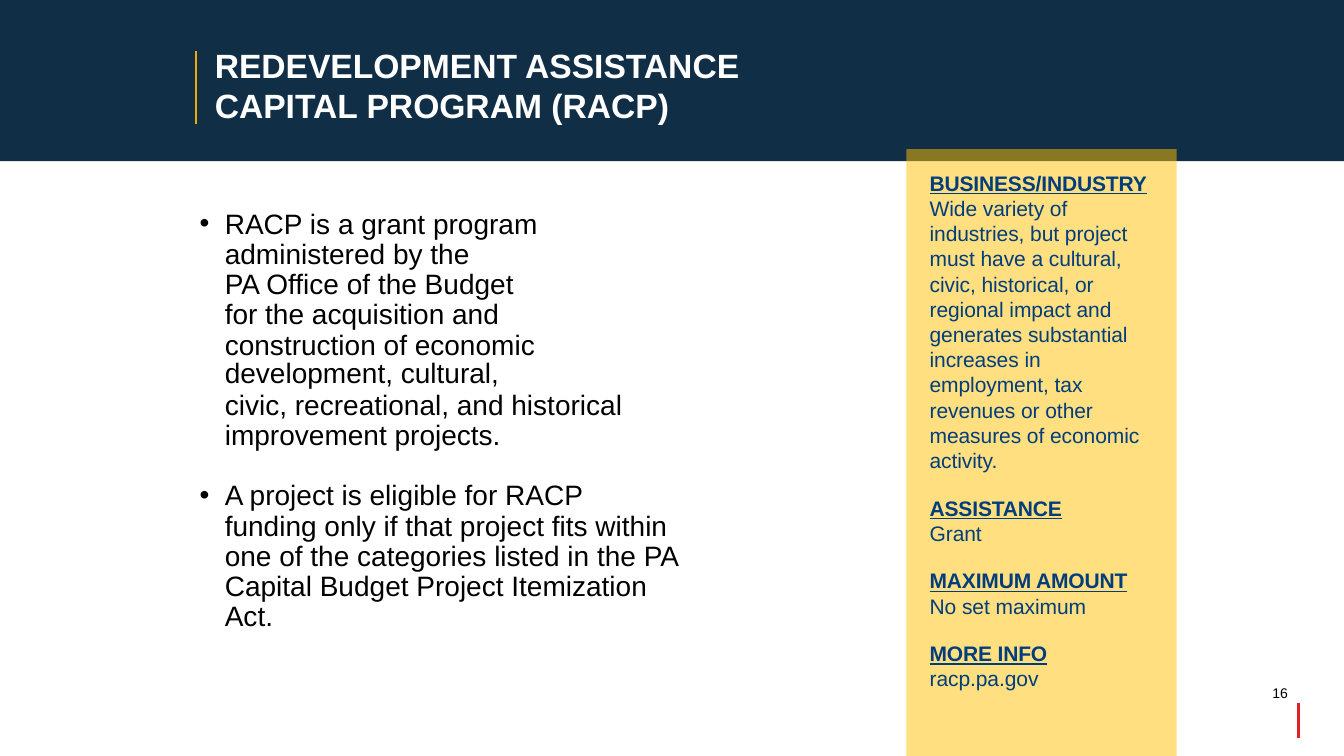
import pptx
import pptx.util
import pptx.dml.color
import pptx.enum.shapes
import pptx.enum.text
import pptx.oxml.ns
import lxml.etree

WIDE, HIGH = 13.33, 7.5
NAVY, GOLD, RED, AMBER = "112E47", "EFAC00", "E22027", "FFC000"
WHITE, BLACK, BLUE = "FFFFFF", "000000", "003D7D"

TITLE = "REDEVELOPMENT ASSISTANCE CAPITAL PROGRAM (RACP)"
PAGE = "16"
GRANT = [
    ("RACP is a grant program\vadministered by the", 21.6, 0),
    ("PA Office of the Budget\vfor the acquisition and\vconstruction of economic", 21.6, 0),
    ("development, cultural,", 20.1, 0),
    ("civic, recreational, and historical\vimprovement projects.", 21.6, 1.5),
]
RULES = [
    ("A project is eligible for RACP\vfunding only if that project fits within\v"
     "one of the categories listed in the PA\vCapital Budget Project Itemization\vAct.", 0.9, 0),
]
FACTS = [
    ("BUSINESS/INDUSTRY",
     "Wide variety of industries, but project must have a cultural, civic, "
     "historical, or regional impact and generates substantial increases in "
     "employment, tax revenues or other measures of economic activity."),
    ("ASSISTANCE", "Grant"),
    ("MAXIMUM AMOUNT", "No set maximum"),
    ("MORE INFO", "racp.pa.gov"),
]

BAND = 1.6
LEFT = 1.97
SIDE = (8.99, 1.48, 2.68, HIGH - 1.48)
INDENT = 0.26

inch, pt = pptx.util.Inches, pptx.util.Pt
qn = pptx.oxml.ns.qn

deck = pptx.Presentation()
deck.slide_width, deck.slide_height = inch(WIDE), inch(HIGH)
slide = deck.slides.add_slide(deck.slide_layouts[6])
shapes = slide.shapes


def color(code):
    return pptx.dml.color.RGBColor.from_string(code)


def block(place, code, alpha=None):
    kind = pptx.enum.shapes.MSO_SHAPE.RECTANGLE
    shape = shapes.add_shape(kind, *map(inch, place))
    shape.shadow.inherit = False
    shape.fill.solid()
    shape.fill.fore_color.rgb = color(code)
    shape.line.fill.background()
    if alpha:
        tone = shape.fill._xPr.find(qn("a:solidFill"))[0]
        lxml.etree.SubElement(tone, qn("a:alpha")).set("val", str(alpha * 1000))
    return shape


def rule(x, top, tall, code, size):
    kind = pptx.enum.shapes.MSO_CONNECTOR.STRAIGHT
    line = shapes.add_connector(kind, inch(x), inch(top), inch(x), inch(top + tall))
    line.line.color.rgb = color(code)
    line.line.width = pt(size)
    lxml.etree.SubElement(line._element.spPr, qn("a:effectLst"))


def setup(shape, inset, anchor="TOP"):
    frame = shape.text_frame
    frame.word_wrap = True
    frame.vertical_anchor = getattr(pptx.enum.text.MSO_ANCHOR, anchor)
    sides = ("left", "top", "right", "bottom")
    for side, size in zip(sides, inset):
        setattr(frame, "margin_" + side, inch(size))
    return frame


def style(para, size, code, bold=False, under=False, track=0):
    para.alignment = pptx.enum.text.PP_ALIGN.LEFT
    for run in para.runs:
        font = run.font
        font.name, font.size = "Arial", pt(size)
        font.bold, font.underline = bold, under
        font.color.rgb = color(code)
        if track:
            run._r.get_or_add_rPr().set("spc", str(track))


def label(place, text, size, code, bold=False, anchor="TOP", right=0):
    frame = setup(shapes.add_textbox(*map(inch, place)), (0.01, 0.01, right, 0), anchor)
    frame.text = text
    style(frame.paragraphs[0], size, code, bold)


def body(place, items):
    frame = setup(shapes.add_textbox(*map(inch, place)), (0, 0.05, 0, 0))
    for i, (text, pitch, gap) in enumerate(items):
        para = frame.paragraphs[0] if i == 0 else frame.add_paragraph()
        para.text = text
        para.line_spacing = pt(pitch) if pitch > 2 else pitch
        para.space_before = pt(gap)
        props = para._p.get_or_add_pPr()
        props.set("marL", str(inch(INDENT)))
        props.set("indent", str(0 if i else -inch(0.25)))
        if i == 0:
            lxml.etree.SubElement(props, qn("a:buFont")).set("typeface", "Arial")
            lxml.etree.SubElement(props, qn("a:buChar")).set("char", "•")
        style(para, 20, BLACK)


def panel(place, facts):
    frame = setup(block(place, AMBER, 50), (0.23, 0.21, 0.26, 0))
    for i, (head, text) in enumerate(facts):
        para = frame.add_paragraph() if i else frame.paragraphs[0]
        para.text = head
        para.space_before = pt(16 if i else 0)
        style(para, 15, BLUE, True, True, -10)
        para = frame.add_paragraph()
        para.text = text
        style(para, 15, BLUE, track=-5)


block((0, 0, WIDE, BAND), NAVY)
rule(12.88, 6.97, 0.35, RED, 2)
label((2.12, 0.43, 6.59, 0.82), TITLE, 24, WHITE, True, "MIDDLE", 0.8)
label((12.61, 6.78, 0.25, 0.19), PAGE, 10, BLACK)
body((LEFT, 2.03, 4.3, 2.46), GRANT)
body((LEFT, 4.73, 4.9, 1.56), RULES)
panel(SIDE, FACTS)
rule(1.94, 0.51, 0.72, GOLD, 1.5)

deck.save("out.pptx")
